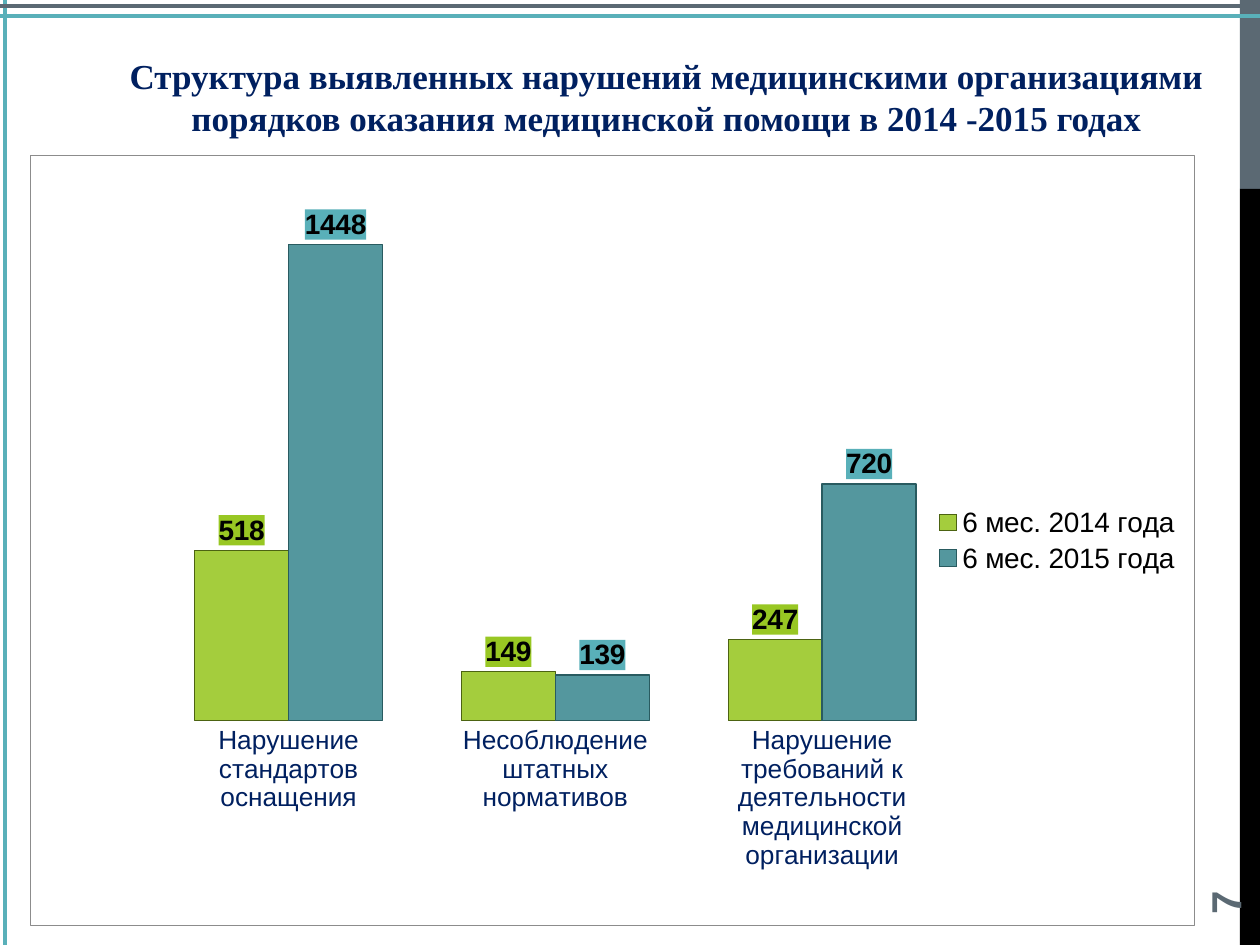
"""Build the slide with the chart of violations found in medical organisations."""
from lxml.etree import SubElement
from pptx import Presentation
from pptx.chart.data import CategoryChartData
from pptx.dml.color import RGBColor
from pptx.enum.chart import XL_CHART_TYPE, XL_LABEL_POSITION, XL_LEGEND_POSITION, XL_TICK_MARK
from pptx.enum.shapes import MSO_CONNECTOR, MSO_SHAPE
from pptx.enum.text import MSO_ANCHOR, PP_ALIGN
from pptx.oxml import parse_xml
from pptx.oxml.ns import nsdecls, qn
from pptx.util import Inches, Pt

WHITE = RGBColor(0xFF, 0xFF, 0xFF)
BLACK = RGBColor(0, 0, 0)
NAVY = RGBColor(0x00, 0x20, 0x60)
SLATE = RGBColor(0x5B, 0x69, 0x73)
TEAL = RGBColor(0x59, 0xB0, 0xB9)
TEAL_BAR = RGBColor(0x3D, 0x89, 0x91)
TEAL_EDGE = RGBColor(0x29, 0x5B, 0x60)
GREEN = RGBColor(0x98, 0xC7, 0x23)
GREEN_EDGE = RGBColor(0x4C, 0x63, 0x12)
GRAY = RGBColor(0x8C, 0x8C, 0x8C)


def write_text(sp, text, font, size, color, align=PP_ALIGN.LEFT):
    tf = sp.text_frame
    tf.word_wrap = True
    tf.vertical_anchor = MSO_ANCHOR.MIDDLE
    p = tf.paragraphs[0]
    p.alignment = align
    r = p.add_run()
    r.text = text
    r.font.name = font
    r.font.size = Pt(size)
    r.font.bold = True
    r.font.color.rgb = color


def fill_xml(color, line=""):
    return parse_xml(
        f'<c:spPr {nsdecls("c", "a")}><a:solidFill><a:srgbClr val="{color}"/></a:solidFill>{line}</c:spPr>'
    )


prs = Presentation()
prs.slide_width, prs.slide_height = Inches(10), Inches(7.5)
s = prs.slides.add_slide(prs.slide_layouts[5])

for top, height, color in ((0, 1.5, SLATE), (1.5, 6, BLACK)):
    sp = s.shapes.add_shape(MSO_SHAPE.RECTANGLE, Inches(9.84), Inches(top), Inches(0.16), Inches(height))
    sp.shadow.inherit = False
    sp.fill.solid()
    sp.fill.fore_color.rgb = color
    sp.line.fill.background()

for x1, y1, x2, y2, color in (
    (10, 0.13, 0, 0.13, TEAL),
    (0.04, 0, 0.04, 7.5, TEAL),
    (0, 0.05, 10, 0.05, SLATE),
):
    line = s.shapes.add_connector(MSO_CONNECTOR.STRAIGHT, Inches(x1), Inches(y1), Inches(x2), Inches(y2))
    line.line.color.rgb = color
    line.line.width = Pt(2.25)
    SubElement(line._element.spPr, qn("a:effectLst"))

number = s.shapes.add_textbox(Inches(9), Inches(6.44), Inches(1.44), Inches(0.4))
number.rotation = 270
write_text(number, "7", font="Arial", size=24, color=SLATE)

title = s.shapes.title
title.left, title.top, title.width, title.height = Inches(0.78), Inches(0.29), Inches(9.02), Inches(0.95)
title.fill.solid()
title.fill.fore_color.rgb = WHITE
title.line.color.rgb = WHITE
title.line.width = Pt(0.75)
write_text(
    title,
    "Структура выявленных нарушений медицинскими организациями порядков оказания медицинской помощи в 2014 -2015 годах",
    font="Times New Roman", size=20, color=NAVY, align=PP_ALIGN.CENTER,
)

data = CategoryChartData()
data.categories = [
    "Нарушение стандартов оснащения",
    "Несоблюдение штатных нормативов",
    "Нарушение требований к деятельности медицинской организации",
]
data.add_series("6 мес. 2014 года", (518, 149, 247))
data.add_series("6 мес. 2015 года", (1448, 139, 720))
chart = s.shapes.add_chart(
    XL_CHART_TYPE.COLUMN_CLUSTERED, Inches(0.24), Inches(1.23), Inches(9.24), Inches(6.12), data
).chart
chart.has_title = False
chart.font.name = "Arial"
chart.font.size = Pt(10)
chart.font.color.rgb = BLACK

border = f'<a:ln w="{Pt(0.5)}"><a:solidFill><a:srgbClr val="{GRAY}"/></a:solidFill></a:ln>'
chart._chartSpace.find(qn("c:txPr")).addprevious(fill_xml(WHITE, border))

plot_area = chart._chartSpace.chart.plotArea
for layout in plot_area.findall(qn("c:layout")):
    plot_area.remove(layout)
layout = parse_xml(f'<c:layout {nsdecls("c")}><c:manualLayout/></c:layout>')
for tag, val in (
    ("layoutTarget", "inner"), ("xMode", "edge"), ("yMode", "edge"),
    ("x", "0.107"), ("y", "0.051"), ("w", "0.688"), ("h", "0.683"),
):
    SubElement(layout[0], qn(f"c:{tag}")).set("val", val)
plot_area.insert(0, layout)

cat = chart.category_axis
cat.major_tick_mark = XL_TICK_MARK.NONE
cat.format.line.fill.background()
cat.tick_labels.font.name = "Arial"
cat.tick_labels.font.size = Pt(15)
cat.tick_labels.font.color.rgb = NAVY
val_axis = chart.value_axis
val_axis.minimum_scale, val_axis.maximum_scale = 0, 1600
val_axis.has_major_gridlines = False
val_axis.visible = False

chart.has_legend = True
legend = chart.legend
legend.position = XL_LEGEND_POSITION.RIGHT
legend.include_in_layout = False
legend.font.name = "Arial"
legend.font.size = Pt(16)
legend.font.color.rgb = BLACK

plot = chart.plots[0]
plot.gap_width = 84
plot.overlap = 0
plot.vary_by_categories = False
styles = ((GREEN, GREEN_EDGE, GREEN), (TEAL_BAR, TEAL_EDGE, TEAL))
for series, (color, edge, label_fill) in zip(plot.series, styles):
    series.format.fill.solid()
    series.format.fill.fore_color.rgb = color
    clr = series._element.spPr.find(qn("a:solidFill")).find(qn("a:srgbClr"))
    SubElement(clr, qn("a:alpha")).set("val", "88000")
    series.format.line.color.rgb = edge
    series.format.line.width = Pt(0.75)
    labels = series.data_labels
    labels.show_value = True
    labels.position = XL_LABEL_POSITION.OUTSIDE_END
    labels.font.name = "Arial"
    labels.font.size = Pt(16)
    labels.font.bold = True
    labels.font.color.rgb = BLACK
    labels._element.find(qn("c:txPr")).addprevious(fill_xml(label_fill))

prs.save("out.pptx")
